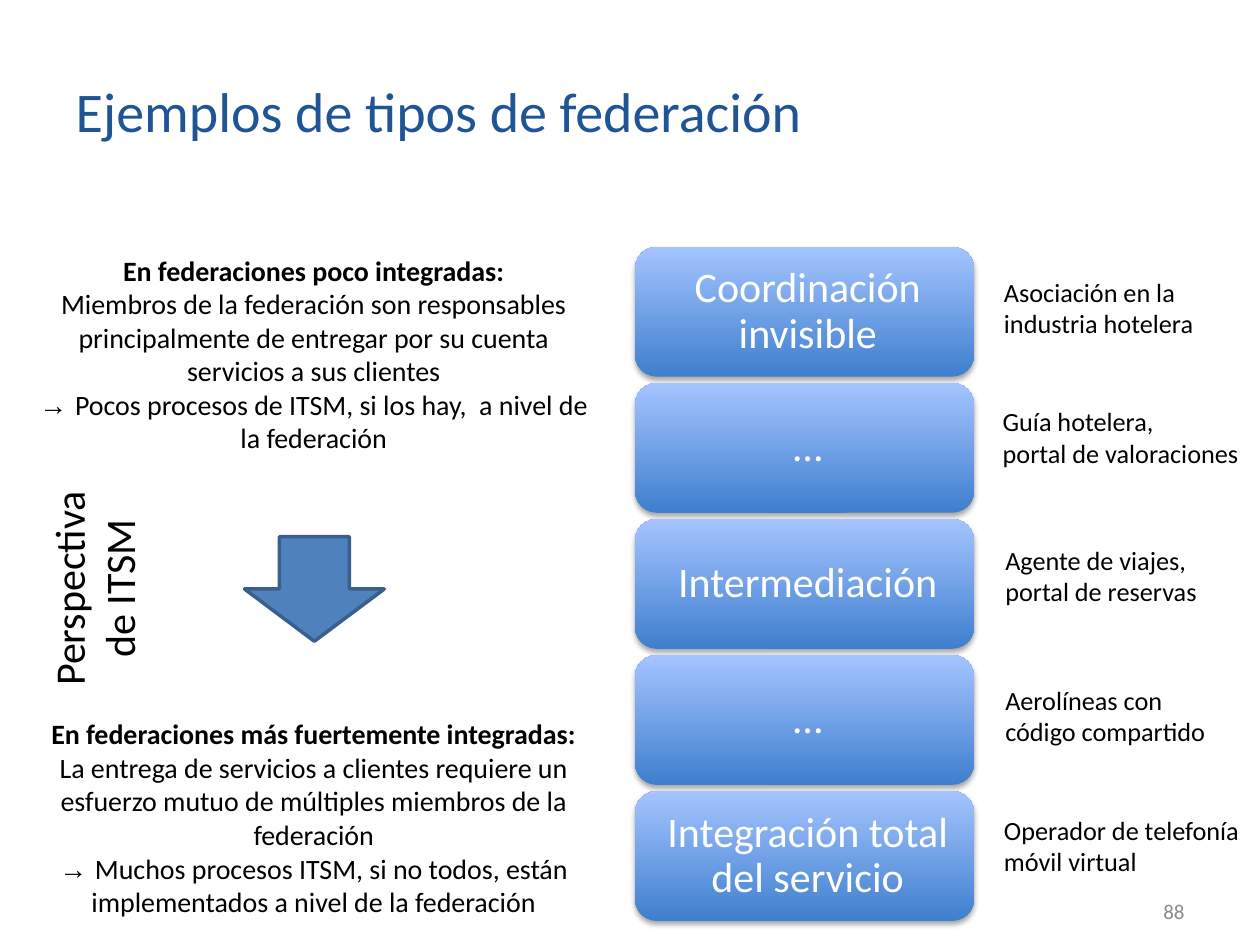
import pptx
import pptx.util
import pptx.dml.color
import pptx.enum.shapes
import pptx.enum.text
import pptx.oxml
import pptx.oxml.ns

COLORS = {
    "title": "205595",
    "text": "000000",
    "white": "FFFFFF",
    "number": "8B8B8B",
    "box_bottom": "3F7FCE",
    "box_top": "A4C4FF",
    "arrow": "4F81BD",
    "arrow_line": "3A5F8C",
}
LEFT = pptx.enum.text.PP_ALIGN.LEFT
CENTER = pptx.enum.text.PP_ALIGN.CENTER
RIGHT = pptx.enum.text.PP_ALIGN.RIGHT
MIDDLE = pptx.enum.text.MSO_ANCHOR.MIDDLE
SHAPES = pptx.enum.shapes.MSO_SHAPE

presentation = pptx.Presentation()
presentation.slide_width = pptx.util.Inches(10)
presentation.slide_height = pptx.util.Inches(7.5)
slide = presentation.slides.add_slide(presentation.slide_layouts[5])


def color(name):
    return pptx.dml.color.RGBColor.from_string(COLORS[name])


def write(shape, lines, size, color_name, alignment, wrap=True):
    """Fill a shape with one paragraph per line, in one style."""
    text_frame = shape.text_frame
    text_frame.word_wrap = wrap
    text_frame.auto_size = pptx.enum.text.MSO_AUTO_SIZE.NONE
    text_frame.text = "\n".join(lines)
    for paragraph in text_frame.paragraphs:
        paragraph.alignment = alignment
        for run in paragraph.runs:
            run.font.name = "Calibri"
            run.font.size = pptx.util.Pt(size)
            run.font.color.rgb = color(color_name)


# Title
title = slide.shapes.title
title.left, title.top = pptx.util.Inches(0.5), pptx.util.Inches(0.3)
title.width, title.height = pptx.util.Inches(7.72), pptx.util.Inches(1.15)
write(title, ["Ejemplos de tipos de federación"], 32, "title", LEFT)
title.text_frame.vertical_anchor = MIDDLE

# Column of federation types, from loose to tight
first_row, row_step = 1.96, 1.08
federation_types = ["Coordinación invisible", "…", "Intermediación", "…",
                    "Integración total del servicio"]
for row, name in enumerate(federation_types):
    box = slide.shapes.add_shape(
        SHAPES.ROUNDED_RECTANGLE,
        pptx.util.Inches(5.04), pptx.util.Inches(first_row + row * row_step),
        pptx.util.Inches(2.69), pptx.util.Inches(1.03))
    box.fill.gradient()
    box.fill.gradient_angle = 90
    for stop, stop_color in zip(box.fill.gradient_stops, ["box_bottom", "box_top"]):
        stop.color.rgb = color(stop_color)
    box.line.fill.background()
    box.shadow.inherit = False
    effects = box._element.spPr.find(pptx.oxml.ns.qn("a:effectLst"))
    effects.append(pptx.oxml.parse_xml(
        f'<a:outerShdw {pptx.oxml.ns.nsdecls("a")} blurRad="40000" dist="23000" '
        'dir="5400000" rotWithShape="0"><a:srgbClr val="000000">'
        '<a:alpha val="35000"/></a:srgbClr></a:outerShdw>'))
    write(box, [name], 24, "white", CENTER)
    box.text_frame.vertical_anchor = MIDDLE
    box.text_frame.margin_left = pptx.util.Inches(0.15)
    box.text_frame.margin_top = box.text_frame.margin_bottom = pptx.util.Inches(0.1)
    box.text_frame.paragraphs[0].line_spacing = 0.9

# Slide number
number = slide.shapes.add_textbox(
    pptx.util.Inches(7.17), pptx.util.Inches(7.03),
    pptx.util.Inches(2.33), pptx.util.Inches(0.4))
write(number, ["88"], 12, "number", RIGHT)
number.text_frame.vertical_anchor = MIDDLE

# Arrow from loose to tight integration
arrow = slide.shapes.add_shape(
    SHAPES.DOWN_ARROW, pptx.util.Inches(1.94), pptx.util.Inches(4.26),
    pptx.util.Inches(1.11), pptx.util.Inches(0.83))
arrow.fill.solid()
arrow.fill.fore_color.rgb = color("arrow")
arrow.line.color.rgb = color("arrow_line")
arrow.line.width = pptx.util.Pt(2)
arrow.shadow.inherit = False

# Descriptions above and below the arrow: heading, explanation, consequence
descriptions = [
    (1.96, "En federaciones poco integradas:",
     "Miembros de la federación son responsables principalmente de entregar "
     "por su cuenta servicios a sus clientes",
     "Pocos procesos de ITSM, si los hay,  a nivel de la federación"),
    (5.64, "En federaciones más fuertemente integradas:",
     "La entrega de servicios a clientes requiere un esfuerzo mutuo de "
     "múltiples miembros de la federación",
     "Muchos procesos ITSM, si no todos, están implementados a nivel de la federación"),
]
for top, heading, explanation, consequence in descriptions:
    description = slide.shapes.add_textbox(
        pptx.util.Inches(0.18), pptx.util.Inches(top),
        pptx.util.Inches(4.62), pptx.util.Inches(1.7))
    write(description, [heading, explanation, "→ "], 16, "text", CENTER)
    paragraphs = description.text_frame.paragraphs
    paragraphs[0].runs[0].font.bold = True
    paragraphs[2].runs[0].font.name = "Arial"
    run = paragraphs[2].add_run()
    run.text = consequence
    run.font.name = "Calibri"
    run.font.size = pptx.util.Pt(16)
    run.font.color.rgb = color("text")

# Vertical label
label = slide.shapes.add_textbox(
    pptx.util.Inches(-0.17), pptx.util.Inches(4.22),
    pptx.util.Inches(1.82), pptx.util.Inches(0.9))
label.rotation = 270
write(label, ["Perspectiva", "de ITSM"], 24, "text", CENTER, wrap=False)

# Example beside each federation type
examples = [
    (7.87, 2.14, 1.7, ["Asociación en la", "industria hotelera"]),
    (7.86, 3.17, 2.07, ["Guía hotelera,", "portal de valoraciones"]),
    (7.88, 4.27, 1.72, ["Agente de viajes,", "portal de reservas"]),
    (7.88, 5.38, 1.79, ["Aerolíneas con\vcódigo compartido"]),
    (7.87, 6.41, 2.07, ["Operador de telefonía", "móvil virtual"]),
]
for left, top, width, lines in examples:
    example = slide.shapes.add_textbox(
        pptx.util.Inches(left), pptx.util.Inches(top),
        pptx.util.Inches(width), pptx.util.Inches(0.6))
    write(example, lines, 15, "text", LEFT, wrap=False)

presentation.save("out.pptx")
